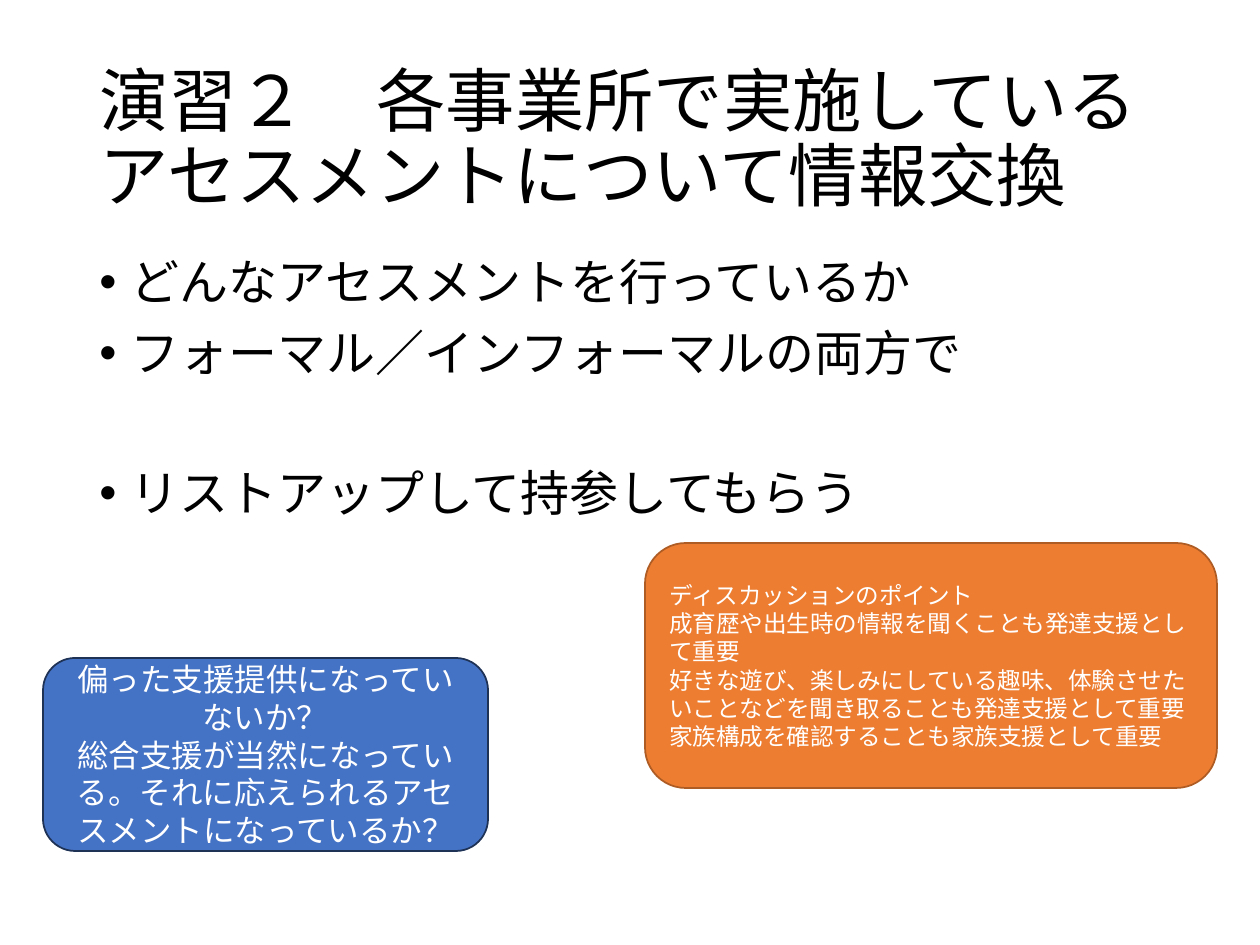
from lxml import etree
from pptx import Presentation
from pptx.dml.color import RGBColor
from pptx.enum.shapes import MSO_SHAPE
from pptx.enum.text import MSO_ANCHOR, PP_ALIGN
from pptx.oxml.ns import qn
from pptx.util import Inches, Pt

ROUNDED = MSO_SHAPE.ROUNDED_RECTANGLE
TOP, MIDDLE = MSO_ANCHOR.TOP, MSO_ANCHOR.MIDDLE
LEFT, CENTER = PP_ALIGN.LEFT, PP_ALIGN.CENTER
PX = Inches(1) / 126


def color(hex_value):
    return RGBColor.from_string(hex_value)


def write(holder, lines, anchor, paragraph_format, size, ink):
    frame = holder.text_frame
    frame.word_wrap = True
    frame.vertical_anchor = anchor
    frame.text = "\n".join(lines)
    font_format = {"name": "Calibri", "size": Pt(size)}
    for paragraph in frame.paragraphs:
        for key, value in paragraph_format.items():
            setattr(paragraph, key, value)
        for run in paragraph.runs:
            for key, value in font_format.items():
                setattr(run.font, key, value)
            run.font.color.rgb = color(ink)
    return frame.paragraphs


prs = Presentation()
prs.slide_width = Inches(10)
prs.slide_height = Inches(7.5)
slide = prs.slides.add_slide(prs.slide_layouts[6])

heading = slide.shapes.add_textbox(*[round(n * PX) for n in (87, 50, 1086, 183)])
write(heading, ["演習２　各事業所で実施しているアセスメントについて情報交換"],
      MIDDLE, {"alignment": LEFT, "line_spacing": 0.9}, 39.6, "000000")

topics = slide.shapes.add_textbox(*[round(n * PX) for n in (87, 252, 1086, 600)])
topic_lines = write(
    topics,
    ["どんなアセスメントを行っているか",
     "フォーマル／インフォーマルの両方で",
     "リストアップして持参してもらう"],
    TOP, {"alignment": LEFT, "line_spacing": 0.9, "space_before": Pt(10)}, 28, "000000")
topic_lines[-1].space_before = Pt(50)
for topic in topic_lines:
    properties = topic._p.get_or_add_pPr()
    properties.set("marL", str(Inches(0.25)))
    properties.set("indent", str(-Inches(0.25)))
    etree.SubElement(properties, qn("a:buFont"), typeface="Arial")
    etree.SubElement(properties, qn("a:buChar"), char="•")

callouts = [
    ((645, 543, 572, 245), "ED7D31", "AF5C24", LEFT, 13.5,
     ["ディスカッションのポイント",
      "成育歴や出生時の情報を聞くことも発達支援として重要",
      "好きな遊び、楽しみにしている趣味、体験させたいことなどを聞き取ることも発達支援として重要",
      "家族構成を確認することも家族支援として重要"]),
    ((43, 658, 445, 193), "4472C4", "1E3256", CENTER, 18,
     ["偏った支援提供になっていないか？",
      "総合支援が当然になっている。それに応えられるアセスメントになっているか？"]),
]
for place, fill, border, alignment, size, lines in callouts:
    callout = slide.shapes.add_shape(ROUNDED, *[round(n * PX) for n in place])
    callout.shadow.inherit = False
    callout.fill.solid()
    callout.fill.fore_color.rgb = color(fill)
    callout.line.color.rgb = color(border)
    callout.line.width = Pt(1)
    write(callout, lines, MIDDLE, {"alignment": alignment}, size, "FFFFFF")

prs.save("out.pptx")
